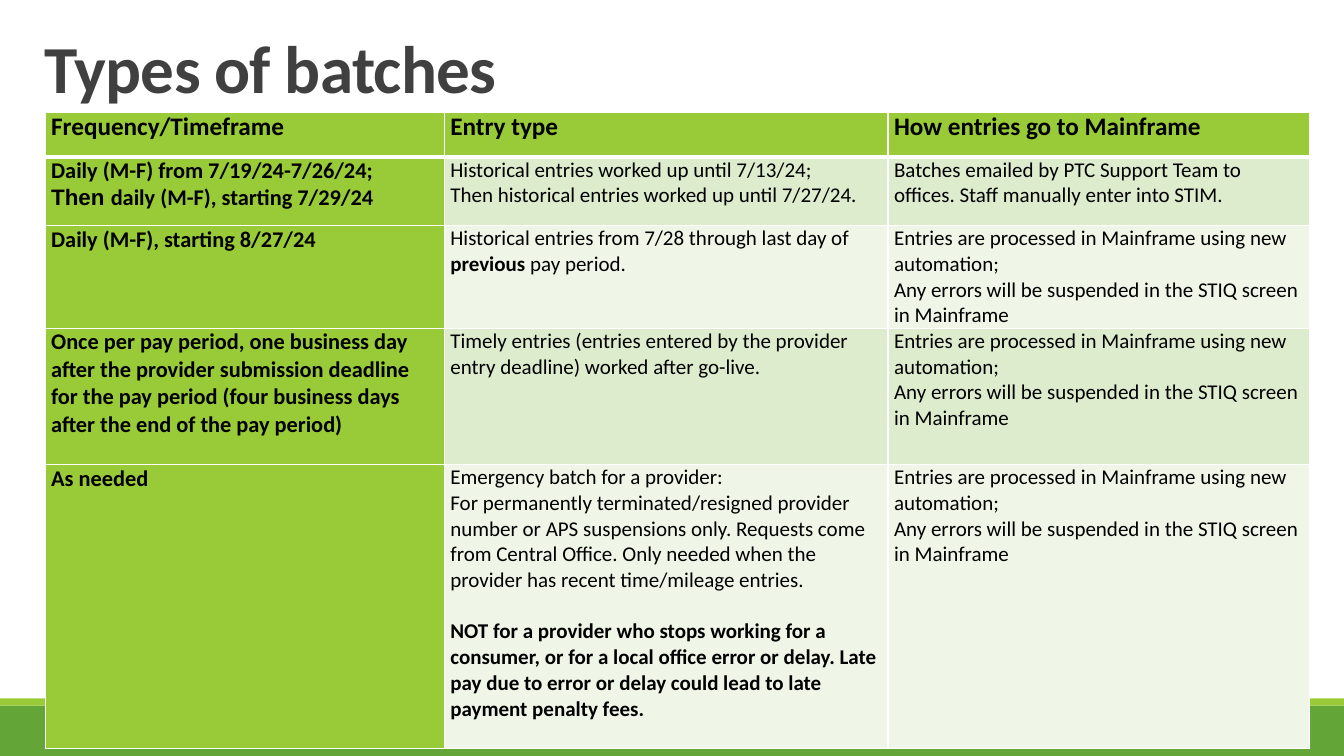
from dataclasses import dataclass
from lxml import etree
from pptx import Presentation
from pptx.dml.color import RGBColor
from pptx.enum import shapes, text
from pptx.oxml.ns import qn
from pptx.util import Cm, Pt


@dataclass(frozen=True)
class Theme:
    font: str = "Calibri"
    alt: str = "Arial"
    ink: str = "000000"
    gray: str = "404040"
    lime: str = "99CB38"
    green: str = "63A537"
    bands: tuple = ("DEECCE", "EFF6E8")
    rule: str = "FFFFFF"
    title: int = 48
    head: int = 18
    label: int = 16
    body: int = 15


THEME = Theme()
TITLE = "Types of batches"
HEADS = ["Frequency/Timeframe", "Entry type", "How entries go to Mainframe"]
AUTO = [
    "Entries are processed in Mainframe using new automation;",
    "Any errors will be suspended in the STIQ screen in Mainframe",
]
ROWS = [
    (
        ["Daily (M-F) from 7/19/24-7/26/24;",
         [("Then ", {"font": THEME.alt}), ("daily (M-F), starting 7/29/24", {})]],
        ["Historical entries worked up until 7/13/24;",
         "Then historical entries worked up until 7/27/24."],
        ["Batches emailed by PTC Support Team to offices. Staff manually enter into STIM."],
    ),
    (
        ["Daily (M-F), starting 8/27/24"],
        [[("Historical entries from 7/28 through last day of ", {}),
          ("previous", {"bold": True}), (" pay period.", {})]],
        AUTO,
    ),
    (
        ["Once per pay period, one business day after the provider submission deadline "
         "for the pay period (four business days after the end of the pay period)"],
        ["Timely entries (entries entered by the provider entry deadline) worked after go-live."],
        AUTO,
    ),
    (
        ["As needed"],
        ["Emergency batch for a provider:",
         "For permanently terminated/resigned provider number or APS suspensions only. "
         "Requests come from Central Office. Only needed when the provider has recent "
         "time/mileage entries.",
         [("NOT for a provider who stops working for a consumer, or for a local office "
           "error or delay. Late pay due to error or delay could lead to late payment "
           "penalty fees.", {"bold": True, "gap": 18.3})]],
        AUTO,
    ),
]
WIDE, HIGH = 33.87, 19.05
BARS = [(17.78, 1.27, THEME.green), (17.6, 0.18, THEME.lime)]
COLS = [10.06, 11.18, 10.62]
TALL = [1.14, 1.73, 2.59, 3.43, 7.16]


def write(frame, lines, **base):
    for i, line in enumerate(lines):
        para = frame.paragraphs[0] if i == 0 else frame.add_paragraph()
        for words, extra in [(line, {})] if isinstance(line, str) else line:
            form = {"font": THEME.font, "color": THEME.ink, "bold": False, **base, **extra}
            run = para.add_run()
            run.text = words
            run.font.name = form["font"]
            run.font.size = Pt(form["size"])
            run.font.bold = form["bold"]
            run.font.color.rgb = RGBColor.from_string(form["color"])
            if "track" in form:
                run.font._element.set("spc", str(form["track"]))
            if "gap" in form:
                para.space_before = Pt(form["gap"])
            if "lead" in form:
                para.line_spacing = form["lead"]


def edge(cell, **sides):
    props = cell._tc.get_or_add_tcPr()
    for side in "LRTB":
        line = etree.SubElement(props, qn("a:ln" + side), w=str(Pt(sides.get(side, 1))))
        fill = etree.SubElement(line, qn("a:solidFill"))
        etree.SubElement(fill, qn("a:srgbClr"), val=THEME.rule)


def paint(item, color):
    item.fill.solid()
    item.fill.fore_color.rgb = RGBColor.from_string(color)


def main():
    deck = Presentation()
    deck.slide_width, deck.slide_height = Cm(WIDE), Cm(HIGH)
    slide = deck.slides.add_slide(deck.slide_layouts[6])

    for top, tall, color in BARS:
        bar = slide.shapes.add_shape(
            shapes.MSO_SHAPE.RECTANGLE, 0, Cm(top), Cm(WIDE), Cm(tall))
        bar.shadow.inherit = False
        bar.line.fill.background()
        paint(bar, color)

    frame = slide.shapes.add_textbox(Cm(0.86), Cm(0.66), Cm(30.12), Cm(2.16)).text_frame
    frame.word_wrap = True
    frame.vertical_anchor = text.MSO_ANCHOR.BOTTOM
    write(frame, [TITLE], size=THEME.title, color=THEME.gray, bold=True, track=-50, lead=0.85)

    grid = slide.shapes.add_table(
        len(TALL), len(COLS), Cm(1.14), Cm(2.82), Cm(sum(COLS)), Cm(sum(TALL))).table
    grid.horz_banding = False
    for col, wide in zip(grid.columns, COLS):
        col.width = Cm(wide)
    for row, tall in zip(grid.rows, TALL):
        row.height = Cm(tall)

    for r, row in enumerate([[[head] for head in HEADS], *ROWS]):
        for c, lines in enumerate(row):
            cell = grid.cell(r, c)
            cell.margin_left = cell.margin_right = Cm(0.15)
            cell.margin_top = cell.margin_bottom = 0
            edge(cell, T=3 if r == 1 else 1, B=3 if r == 0 else 1)
            strong = r == 0 or c == 0
            paint(cell, THEME.lime if strong else THEME.bands[(r - 1) % 2])
            size = THEME.head if r == 0 else THEME.label if c == 0 else THEME.body
            write(cell.text_frame, lines, size=size, bold=strong)

    deck.save("out.pptx")


if __name__ == "__main__":
    main()
